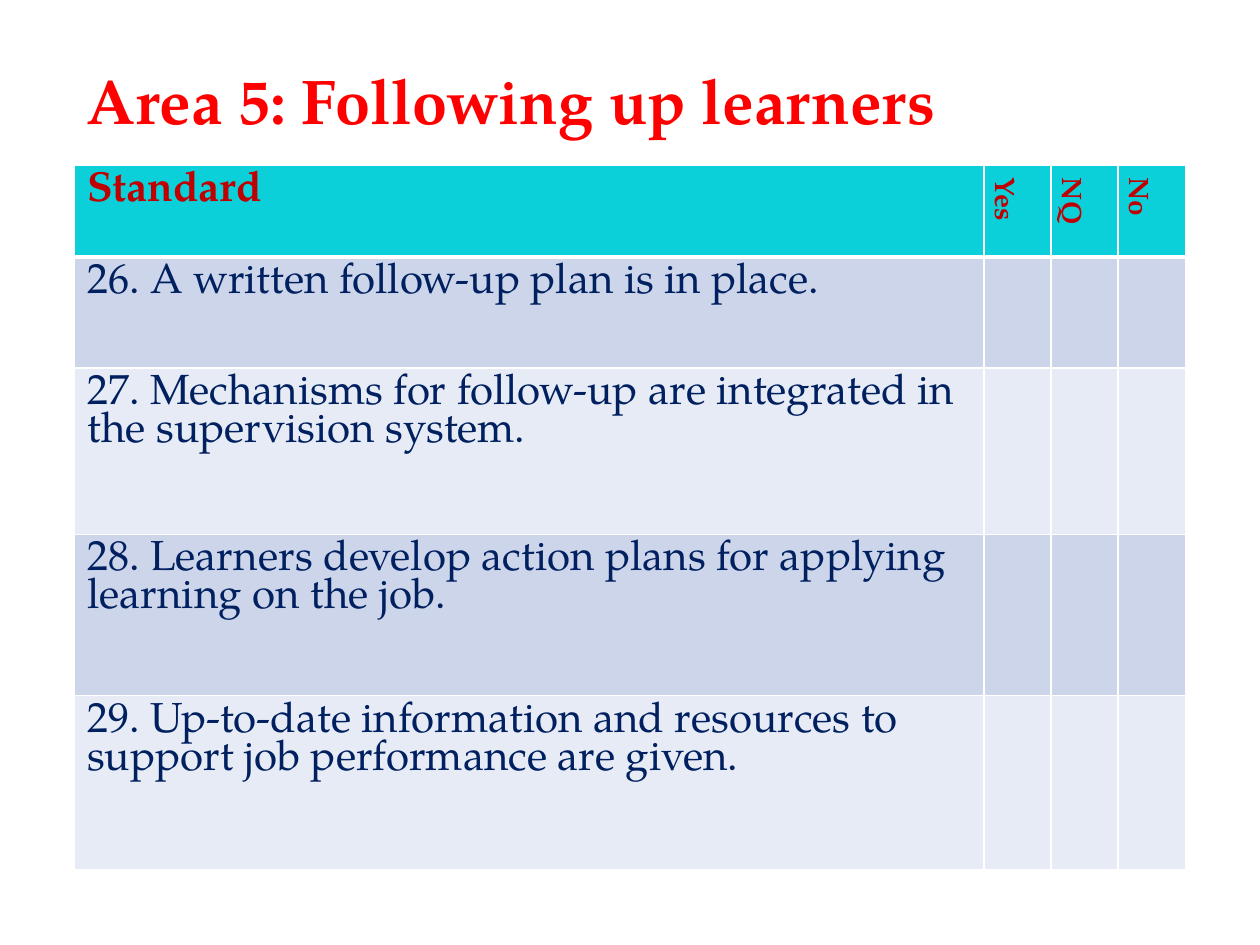
from typing import NamedTuple

from lxml import etree
from pptx import Presentation
from pptx.dml.color import RGBColor
from pptx.oxml import ns
from pptx.util import Cm, Pt

FACE = "TeX Gyre Pagella"
RED = RGBColor(0xFF, 0x00, 0x00)
CRIMSON = RGBColor(0xC0, 0x00, 0x00)
NAVY = RGBColor(0x00, 0x20, 0x60)
CYAN = RGBColor(0x0B, 0xD0, 0xD9)
BANDS = RGBColor(0xCC, 0xD5, 0xEA), RGBColor(0xE7, 0xEB, 0xF5)
WHITE = RGBColor(0xFF, 0xFF, 0xFF)


class Style(NamedTuple):
    size: int
    color: RGBColor
    bold: bool = True
    pitch: float = 0.9


class Row(NamedTuple):
    height: float
    text: str


TITLE = Style(36, RED, pitch=1.0)
HEAD = Style(24, CRIMSON)
MARK = Style(16, CRIMSON)
BODY = Style(24, NAVY, False)

MARKS = "Yes", "NQ", "No"
WIDTHS = 18.34, 1.35, 1.35, 1.36
HEAD_HEIGHT = 1.85
ROWS = (
    Row(2.24, "26. A written follow-up plan is in place."),
    Row(3.35, "27. Mechanisms for follow-up are integrated in the supervision system."),
    Row(3.25, "28. Learners develop action plans for applying learning on the job."),
    Row(3.51, "29. Up-to-date information and resources to support job performance are given."),
)


def write(frame, words: str, style: Style) -> None:
    para = frame.paragraphs[0]
    para.line_spacing = style.pitch
    run = para.add_run()
    run.text = words
    look = {"name": FACE, "size": Pt(style.size), "bold": style.bold}
    for key, value in look.items():
        setattr(run.font, key, value)
    run.font.color.rgb = style.color


def edge(cell, base: float) -> None:
    """Draw white borders, with the bottom one in its own width."""
    props = cell._tc.get_or_add_tcPr()
    sides = {"lnL": 1, "lnR": 1, "lnT": 1, "lnB": base}
    for spot, (side, width) in enumerate(sides.items()):
        line = etree.Element(ns.qn(f"a:{side}"), w=str(Pt(width)))
        fill = etree.SubElement(line, ns.qn("a:solidFill"))
        etree.SubElement(fill, ns.qn("a:srgbClr"), val=str(WHITE))
        props.insert(spot, line)


def paint(cell, color: RGBColor, base: float = 1) -> None:
    cell.fill.solid()
    cell.fill.fore_color.rgb = color
    edge(cell, base)


def add_grid(slide) -> None:
    tall = [HEAD_HEIGHT] + [row.height for row in ROWS]
    grid = slide.shapes.add_table(
        len(tall), len(WIDTHS), Cm(1.5), Cm(3.33), Cm(sum(WIDTHS)), Cm(sum(tall))
    ).table
    for col, width in zip(grid.columns, WIDTHS):
        col.width = Cm(width)
    for row, height in zip(grid.rows, tall):
        row.height = Cm(height)

    for cell in grid.rows[0].cells:
        paint(cell, CYAN, 3)
    write(grid.cell(0, 0).text_frame, "Standard", HEAD)
    for col, mark in enumerate(MARKS, 1):
        cell = grid.cell(0, col)
        write(cell.text_frame, mark, MARK)
        cell._tc.get_or_add_tcPr().set("vert", "vert")

    for num, row in enumerate(ROWS, 1):
        for cell in grid.rows[num].cells:
            paint(cell, BANDS[(num - 1) % 2])
        write(grid.cell(num, 0).text_frame, row.text, BODY)


def main() -> None:
    deck = Presentation()
    deck.slide_width, deck.slide_height = Cm(25.4), Cm(19.05)
    slide = deck.slides.add_slide(deck.slide_layouts[6])
    add_grid(slide)
    box = slide.shapes.add_textbox(Cm(1.49), Cm(1.12), Cm(22.2), Cm(1.8))
    box.text_frame.word_wrap = True
    write(box.text_frame, "Area 5: Following up learners", TITLE)
    deck.save("out.pptx")


if __name__ == "__main__":
    main()
